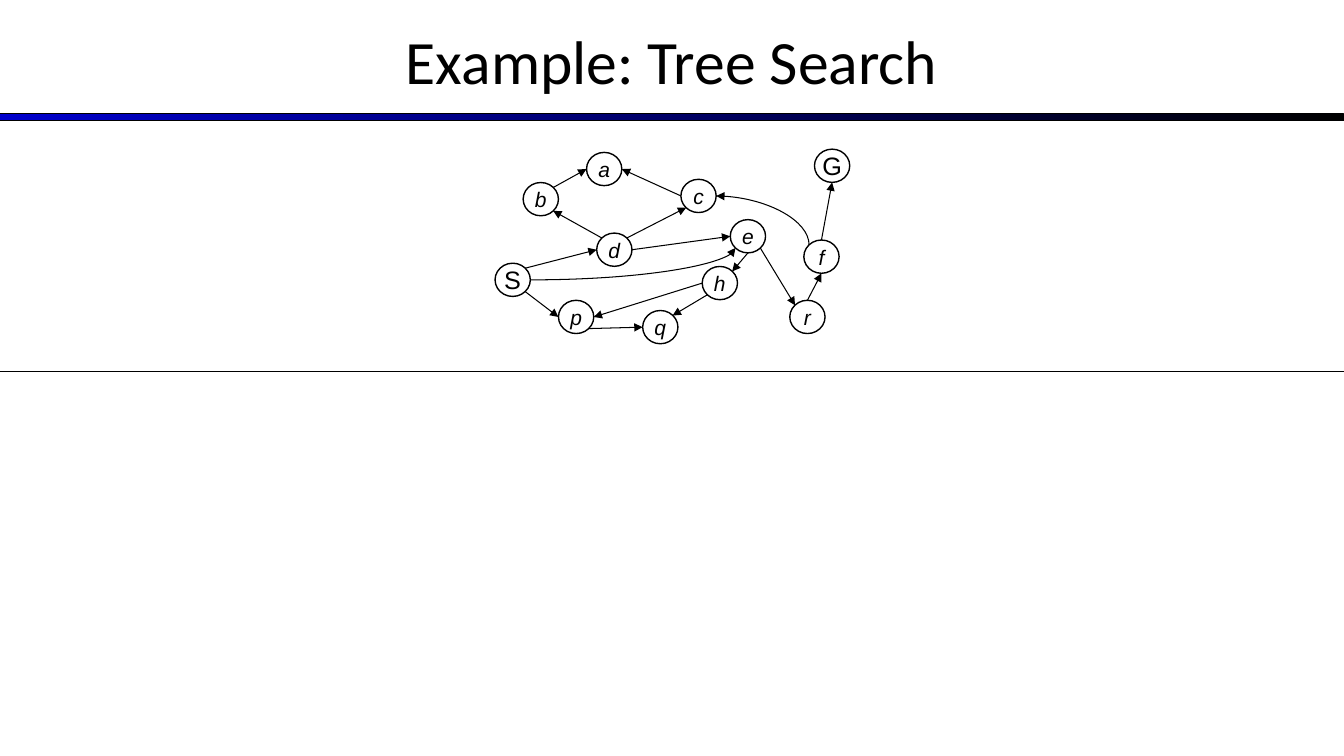
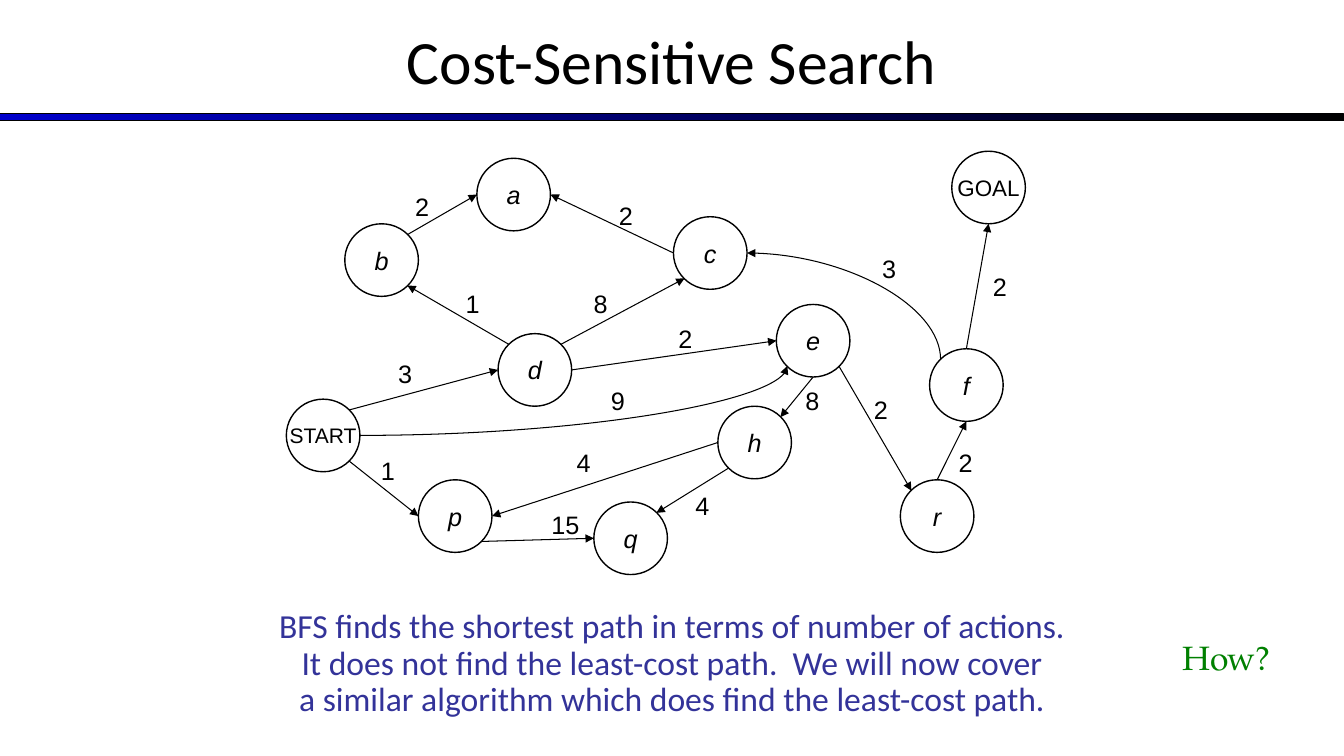
from dataclasses import dataclass
from lxml.etree import SubElement
from pptx import Presentation
from pptx.dml.color import RGBColor
from pptx.enum.shapes import MSO_CONNECTOR, MSO_SHAPE
from pptx.enum.text import MSO_ANCHOR, PP_ALIGN
from pptx.oxml.ns import qn
from pptx.util import Inches, Pt


@dataclass(frozen=True)
class Theme:
    ink: str = "000000"
    band: str = "0000CC"
    note: str = "333399"
    ask: str = "008000"
    head: str = "Calibri"
    body: str = "Arial"
    serif: str = "TeX Gyre Pagella"
    title: int = 44
    text: int = 24
    label: int = 18
    small: int = 15
    thin: float = 0.75
    ring: float = 1


theme = Theme()


def write(shape, text, size=theme.label, font=theme.body, color=theme.ink, italic=False,
          align=PP_ALIGN.LEFT, anchor=MSO_ANCHOR.TOP, space=1.0, wrap=True, pad=0.1):
    frame = shape.text_frame
    frame.word_wrap = wrap
    frame.vertical_anchor = anchor
    frame.margin_left = frame.margin_right = Inches(pad)
    frame.margin_top = frame.margin_bottom = Inches(pad / 2)
    frame.text = text
    for para in frame.paragraphs:
        para.alignment = align
        para.line_spacing = space
        for run in para.runs:
            run.font.size = Pt(size)
            run.font.name = font
            run.font.italic = italic
            run.font.color.rgb = RGBColor.from_string(color)


def join(shapes, start, end, kind=MSO_CONNECTOR.STRAIGHT, tip=None):
    wire = shapes.add_connector(kind, *(Inches(n) for n in start + end))
    wire.line.color.rgb = RGBColor.from_string(theme.ink)
    wire.line.width = Pt(theme.thin)
    props = wire.element.spPr
    if kind == MSO_CONNECTOR.CURVE:
        props.prstGeom.set("prst", "curvedConnector2")
    if tip:
        SubElement(props.get_or_add_ln(), qn(f"a:{tip}")).set("type", "triangle")
    SubElement(props, qn("a:effectLst"))


# Graph: top left corner of each node at full size
nodes = {
    "S": (2.84, 3.96), "G": (9.44, 1.5), "d": (4.94, 3.31), "b": (3.42, 2.22),
    "p": (4.15, 4.76), "q": (5.89, 4.98), "c": (6.68, 2.15), "e": (7.7, 3.02),
    "h": (7.12, 4.03), "a": (4.73, 1.57), "f": (9.22, 3.46), "r": (8.93, 4.76),
}

# Points on a node's rim, as shares of its width and height
low, high = 0.15, 0.85
rim = {
    "n": (0.5, 0), "ne": (high, low), "e": (1, 0.5), "se": (high, high),
    "s": (0.5, 1), "sw": (low, high), "w": (0, 0.5), "nw": (low, low),
}

# Edges: node and rim point at both ends, cost, place of the cost
edges = [
    ("S", "se", "p", "w", "1", (3.68, 4.47)),
    ("p", "se", "q", "w", "15", (5.37, 5)),
    ("h", "sw", "q", "ne", "4", (6.8, 4.82)),
    ("h", "w", "p", "e", "4", (5.62, 4.39)),
    ("e", "s", "h", "ne", "8", (7.89, 3.77)),
    ("e", "se", "r", "nw", "2", (8.57, 3.86)),
    ("r", "n", "f", "s", "2", (9.41, 4.39)),
    ("f", "n", "G", "s", "2", (9.75, 2.64)),
    ("S", "ne", "d", "w", "3", (3.85, 3.51)),
    ("d", "nw", "b", "se", "1", (4.52, 2.81)),
    ("b", "ne", "a", "w", "2", (4.02, 1.85)),
    ("c", "w", "a", "e", "2", (6.04, 1.94)),
    ("d", "ne", "c", "sw", "8", (5.79, 2.81)),
    ("d", "e", "e", "w", "2", (6.63, 3.16)),
    ("f", "nw", "c", "e", "3", (8.65, 2.46)),
    ("S", "e", "e", "sw", "9", (5.96, 3.77)),
]
curves = {("f", "c"), ("S", "e")}

# Slides: title, graph corner, scale, node size, long names, letter size, costs
pages = [
    ("Example: Tree Search", (4.91, 1.48), (0.48, 0.46), (0.35, 0.33),
     {"S": ("S", 18), "G": ("G", 18)}, theme.small, False),
    ("Cost-Sensitive Search", (2.84, 1.5), (1, 1), (0.73, 0.72),
     {"S": ("START", 15), "G": ("GOAL", 16)}, theme.label, True),
]

deck = Presentation()
deck.slide_width, deck.slide_height = Inches(13.33), Inches(7.5)
wide = deck.slide_width

for title, (left, top), (across, down), (width, height), names, size, costs in pages:
    slide = deck.slides.add_slide(deck.slide_layouts[6])

    # Band and title
    band = slide.shapes.add_shape(MSO_SHAPE.RECTANGLE, 0, Inches(1.13), wide, Inches(0.07))
    band.shadow.inherit = False
    band.fill.gradient()
    band.fill.gradient_angle = 0
    for stop, color, place in zip(band.fill.gradient_stops, (theme.band, theme.ink), (0, 1)):
        stop.color.rgb = RGBColor.from_string(color)
        stop.position = place
    band.line.color.rgb = RGBColor.from_string(theme.ink)
    band.line.width = Pt(theme.thin)
    box = slide.shapes.add_textbox(0, Inches(-0.03), wide, Inches(1.25))
    write(box, title, size=theme.title, font=theme.head, align=PP_ALIGN.CENTER,
          anchor=MSO_ANCHOR.MIDDLE)

    # Nodes
    graph = slide.shapes.add_group_shape().shapes
    spots = {}
    for name, (x, y) in nodes.items():
        spots[name] = (left + (x - 2.84) * across, top + (y - 1.5) * down)
        node = graph.add_shape(MSO_SHAPE.FLOWCHART_CONNECTOR,
                               *(Inches(n) for n in spots[name] + (width, height)))
        node.shadow.inherit = False
        node.fill.background()
        node.line.color.rgb = RGBColor.from_string(theme.ink)
        node.line.width = Pt(theme.ring)
        text, points = names.get(name, (name, size))
        write(node, text, size=points, italic=name not in names, wrap=False, pad=0,
              align=PP_ALIGN.CENTER, anchor=MSO_ANCHOR.MIDDLE)

    # Edges and costs
    for tail, out, head, into, cost, place in edges:
        start, end = [(spots[name][0] + rim[side][0] * width,
                       spots[name][1] + rim[side][1] * height)
                      for name, side in ((tail, out), (head, into))]
        if (tail, head) not in curves:
            join(graph, start, end, tip="tailEnd")
        elif out == "e":
            join(graph, start, end, MSO_CONNECTOR.CURVE, "tailEnd")
        else:  # a curve leaves level, so this one is drawn from its arrowhead
            join(graph, end, start, MSO_CONNECTOR.CURVE, "headEnd")
        if costs:
            box = graph.add_textbox(*(Inches(n) for n in place),
                                    Inches(0.17 + 0.17 * len(cost)), Inches(0.4))
            write(box, cost)

# Rule under the small graph
first, last = deck.slides
join(first.shapes, (0, 3.69), (13.33, 3.69))

# Closing remarks
box = last.shapes.add_textbox(0, Inches(6), wide, Inches(1.34))
write(box, "BFS finds the shortest path in terms of number of actions.\n"
           "It does not find the least-cost path.  We will now cover\n"
           "a similar algorithm which does find the least-cost path.",
      size=theme.text, font=theme.head, color=theme.note, align=PP_ALIGN.CENTER, space=0.9)
box = last.shapes.add_textbox(Inches(11.63), Inches(6.27), Inches(1.67), Inches(0.5))
write(box, "How?", size=theme.text, font=theme.serif, color=theme.ask)

deck.save("out.pptx")
